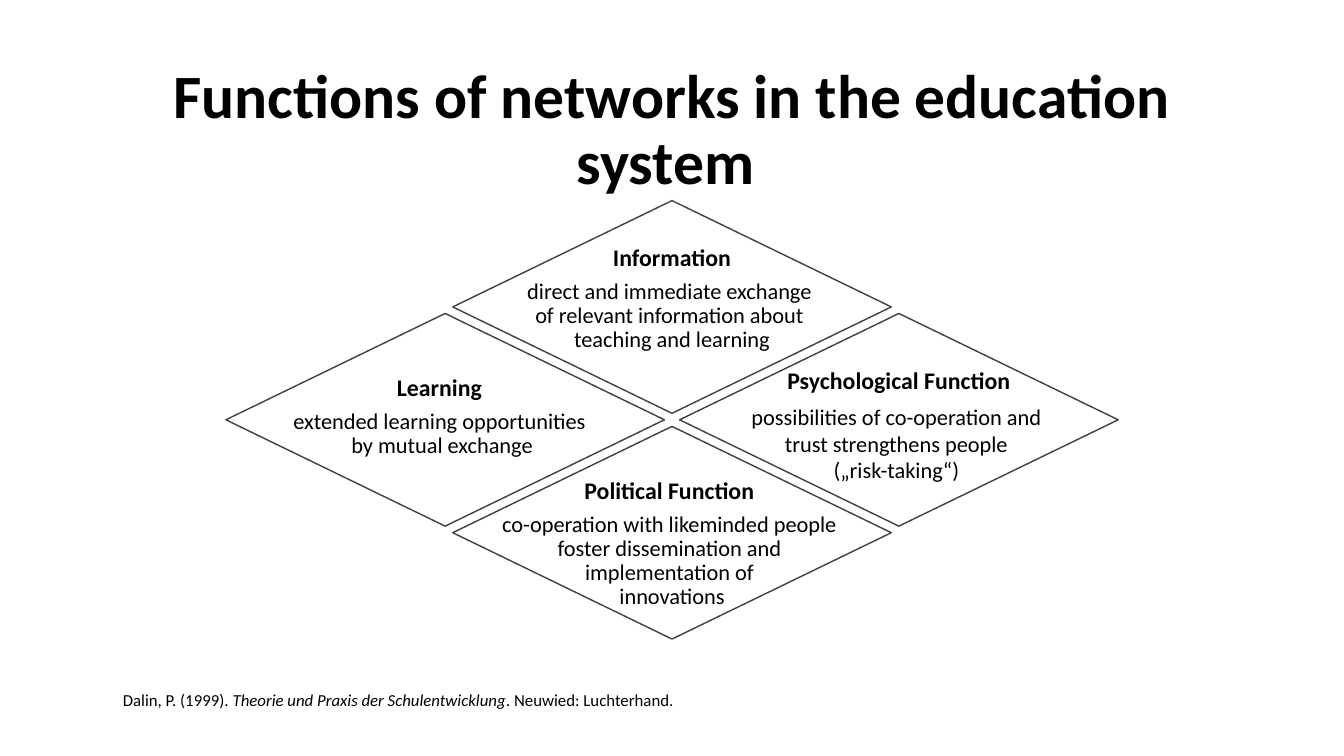
"""Build a slide showing four functions of networks as a lattice of diamonds."""
from pptx import Presentation
from pptx.dml.color import RGBColor
from pptx.enum.shapes import MSO_SHAPE as Shape
from pptx.enum.text import MSO_ANCHOR as Anchor, PP_ALIGN as Align
from pptx.util import Inches, Pt

TITLE = "Functions of networks in the education system "
CITATION = [
    ("Dalin, P. (1999). ", False),
    ("Theorie und Praxis der Schulentwicklung", True),
    (". Neuwied: Luchterhand.", False),
]
FUNCTIONS = [
    {"name": "Information", "column": 1, "row": 0, "text_box": (4.49, 2.39, 1.17), "spacing": 0.9,
     "detail": "direct and immediate exchange \nof relevant information about \nteaching and learning"},
    {"name": "Learning ", "column": 0, "row": 1, "text_box": (2.21, 3.68, 0.93), "spacing": 0.9,
     "detail": "extended learning opportunities \nby mutual exchange"},
    {"name": "Political Function ", "column": 1, "row": 2, "text_box": (4.49, 4.7, 1.41), "spacing": 0.9,
     "detail": "co-operation with likeminded people \nfoster dissemination and \n"
               "implementation of \ninnovations"},
    {"name": "Psychological Function", "column": 2, "row": 1, "text_box": (6.74, 3.58, 1.28), "spacing": 1.0,
     "detail": "possibilities of co-operation and \ntrust strengthens people \n(„risk-taking“) "},
]
THEME = {
    "font": "Calibri",
    "text": RGBColor(0, 0, 0),
    "fill": RGBColor(255, 255, 255),
    "line": RGBColor(0x40, 0x40, 0x40),
    "title": Pt(44),
    "name": Pt(17),
    "detail": Pt(16),
    "citation": Pt(12),
}
LATTICE_LEFT, LATTICE_TOP = 2.24, 1.99
COLUMN_STEP, ROW_STEP = 2.25, 1.12
DIAMOND_WIDTH, DIAMOND_HEIGHT = 4.35, 2.11


def add_text_box(slide, left, top, width, height):
    """Add a wrapping text box and return its text frame."""
    box = slide.shapes.add_textbox(Inches(left), Inches(top), Inches(width), Inches(height))
    box.text_frame.word_wrap = True
    return box.text_frame


def style(paragraph, role, bold=False, align=Align.CENTER, spacing=0.9, after=6):
    """Apply the theme and paragraph layout."""
    paragraph.alignment = align
    paragraph.line_spacing = spacing
    paragraph.space_after = Pt(after)
    font = paragraph.font
    font.name = THEME["font"]
    font.size = THEME[role]
    font.bold = bold
    font.color.rgb = THEME["text"]


def add_function(slide, function):
    """Draw one diamond with its name and detail."""
    diamond = slide.shapes.add_shape(
        Shape.FLOWCHART_DECISION,
        Inches(LATTICE_LEFT + function["column"] * COLUMN_STEP),
        Inches(LATTICE_TOP + function["row"] * ROW_STEP),
        Inches(DIAMOND_WIDTH), Inches(DIAMOND_HEIGHT))
    diamond.shadow.inherit = False
    diamond.fill.solid()
    diamond.fill.fore_color.rgb = THEME["fill"]
    diamond.line.color.rgb = THEME["line"]
    diamond.line.width = Pt(1)

    left, top, height = function["text_box"]
    frame = add_text_box(slide, left, top, DIAMOND_WIDTH, height)
    for paragraph, role in ((frame.paragraphs[0], "name"), (frame.add_paragraph(), "detail")):
        paragraph.text = function[role]
        style(paragraph, role, bold=role == "name", spacing=function["spacing"])


def main():
    """Assemble and save the slide."""
    presentation = Presentation()
    presentation.slide_width, presentation.slide_height = Inches(13.33), Inches(7.5)
    slide = presentation.slides.add_slide(presentation.slide_layouts[6])

    for function in FUNCTIONS:
        add_function(slide, function)

    title_frame = add_text_box(slide, 0.92, 0.58, 11.5, 1.45)
    title_frame.vertical_anchor = Anchor.MIDDLE
    title = title_frame.paragraphs[0]
    title.text = TITLE
    style(title, "title", bold=True, after=0)

    citation = add_text_box(slide, 0.92, 6.79, 11.67, 0.3).paragraphs[0]
    citation._p.get_or_add_pPr().set("marL", str(Inches(0.2)))
    for text, italic in CITATION:
        run = citation.add_run()
        run.text = text
        run.font.italic = italic
    style(citation, "citation", align=Align.LEFT, spacing=1.0)

    presentation.save("out.pptx")


if __name__ == "__main__":
    main()
